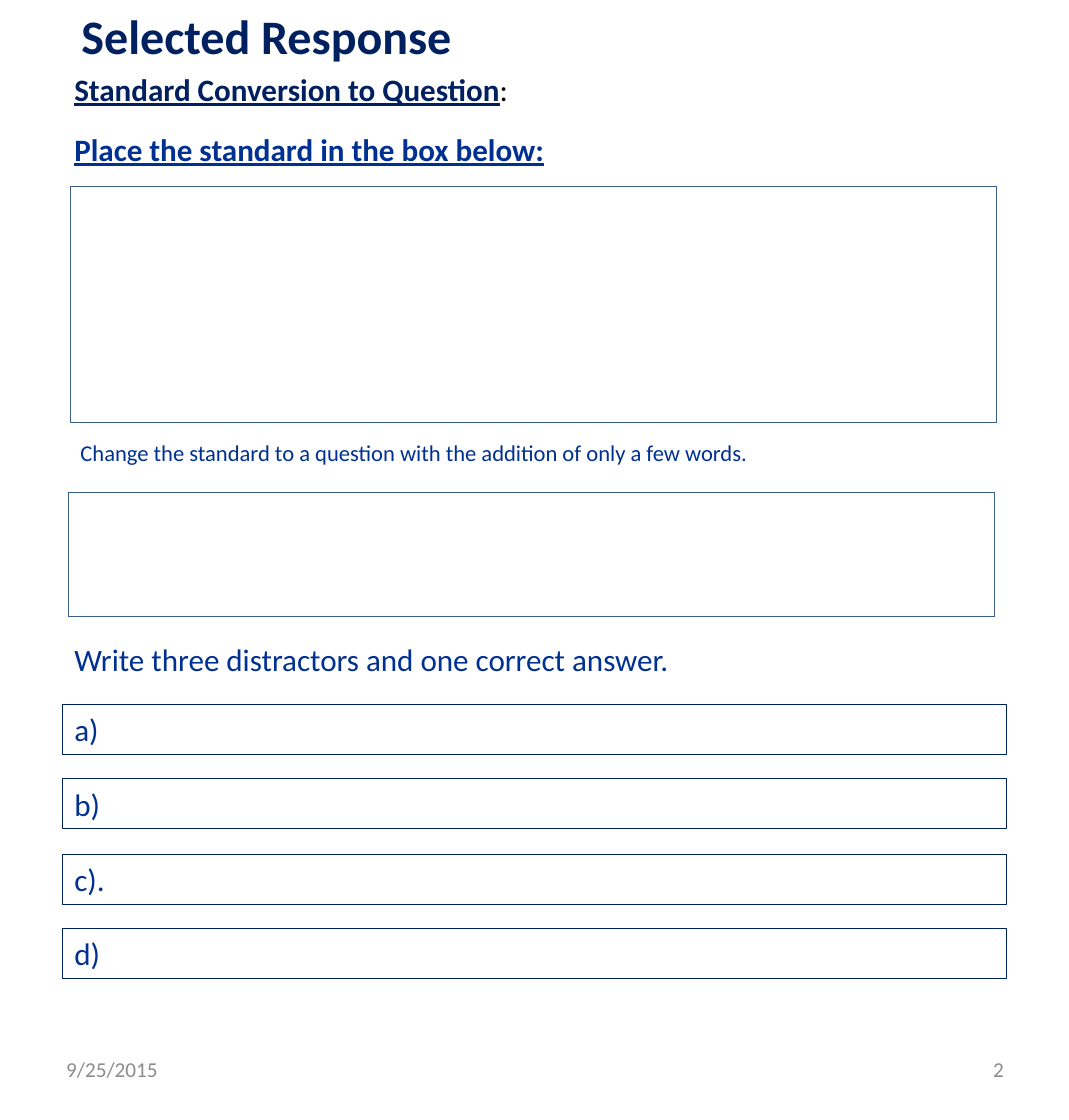
import pptx
import pptx.dml.color
import pptx.enum.dml
import pptx.enum.shapes
import pptx.enum.text
import pptx.util

SCALE = 9144  # EMU in one px, 100 px to the inch
NAVY, BLUE, STEEL, GREY = "002060", "003192", "3A5F8C", "8C8C8C"
ALIGN = pptx.enum.text.PP_ALIGN
ANCHOR = pptx.enum.text.MSO_ANCHOR


def px(length):
    return pptx.util.Emu(length * SCALE)


def colour(value):
    return pptx.dml.color.RGBColor.from_string(value)


def write(shape, text, size, ink, bold=False, underline=False, align=ALIGN.LEFT,
          anchor=ANCHOR.TOP, inset=12):
    """Fill the shape with one formatted paragraph and return it."""
    frame = shape.text_frame
    frame.word_wrap = True
    frame.auto_size = pptx.enum.text.MSO_AUTO_SIZE.NONE
    frame.vertical_anchor = anchor
    frame.margin_left, frame.margin_right = px(inset), px(12)
    frame.margin_top = frame.margin_bottom = px(6)
    para = frame.paragraphs[0]
    para.alignment = align
    para.add_run().text = text
    font = para.font
    font.name, font.size = "Calibri", pptx.util.Pt(size)
    font.bold, font.underline = bold, underline
    font.color.rgb = colour(ink)
    return para


def add_text(page, box, *args, **options):
    return write(page.shapes.add_textbox(*map(px, box)), *args, **options)


def add_frame(page, box, ink, width):
    """Add an unfilled outlined rectangle."""
    frame = page.shapes.add_shape(
        pptx.enum.shapes.MSO_SHAPE.RECTANGLE, *map(px, box))
    frame.shadow.inherit = False
    frame.fill.background()
    frame.line.color.rgb = colour(ink)
    frame.line.width = pptx.util.Pt(width)
    return frame


def add_entry_box(page, box):
    frame = add_frame(page, box, STEEL, 0.25)
    frame.line.dash_style = pptx.enum.dml.MSO_LINE.ROUND_DOT


def add_heading(page, box):
    left, top, width, height = box
    title = page.shapes.title
    title.left, title.top, title.width, title.height = map(
        px, (left, top, width, 63))
    write(title, "Selected Response", 34, NAVY, bold=True, inset=19)
    para = add_text(page, (left, top + 63, width, 49),
                    "Standard Conversion to Question", 22, NAVY)
    para.runs[0].font.bold = para.runs[0].font.underline = True
    colon = para.add_run()
    colon.text = ":"
    colon.font.color.rgb = colour("000000")
    add_text(page, (left, top + 122, width, height - 122),
             "Place the standard in the box below:", 22, BLUE,
             bold=True, underline=True)


def add_conversion(page, box):
    left, top, width, height = box
    add_entry_box(page, (left + 2, top, width, 232))
    add_text(page, (left, top + 242, width + 18, 39),
             "Change the standard to a question with the addition of only a few words.",
             16, BLUE)
    add_entry_box(page, (left, top + 300, width, height - 300))


def add_answers(page, box, labels):
    left, top, width, height = box
    row = 49
    add_text(page, (left, top, width, row),
             "Write three distractors and one correct answer.", 22, BLUE)
    first = top + 69
    step = (top + height - row - first) / (len(labels) - 1)
    for index, label in enumerate(labels):
        place = (left, round(first + index * step), width, row)
        write(add_frame(page, place, NAVY, 0.75), label, 22, BLUE)


def add_footer(page, box):
    left, top, width, height = box
    part = 245
    add_text(page, (left, top, part, height), "9/25/2015", 15, GREY,
             anchor=ANCHOR.MIDDLE)
    add_text(page, (left + width - part, top, part, height), "2", 15, GREY,
             align=ALIGN.RIGHT, anchor=ANCHOR.MIDDLE)


def main():
    deck = pptx.Presentation()
    deck.slide_width, deck.slide_height = px(1050), px(1100)
    page = deck.slides.add_slide(deck.slide_layouts.get_by_name("Title Only"))
    add_heading(page, (61, 0, 928, 171))
    add_conversion(page, (67, 183, 910, 422))
    add_answers(page, (61, 623, 928, 338), ["a)", "b)", "c).", "d)"])
    add_footer(page, (53, 1020, 945, 59))
    deck.save("out.pptx")


if __name__ == "__main__":
    main()
